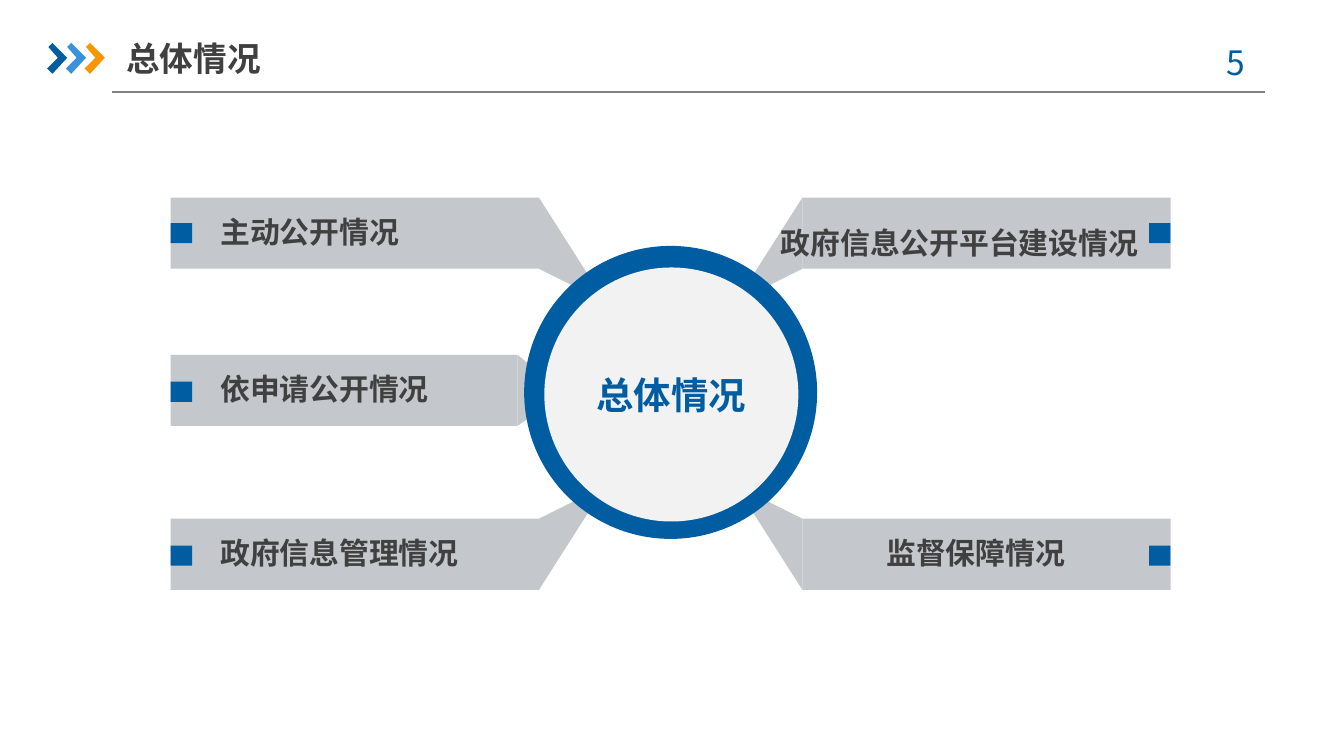
from lxml.etree import SubElement
from pptx import Presentation
from pptx.dml.color import RGBColor
from pptx.enum.shapes import MSO_CONNECTOR, MSO_SHAPE
from pptx.enum.text import MSO_ANCHOR, PP_ALIGN
from pptx.oxml.ns import qn
from pptx.util import Inches, Pt

FONT = "Noto Sans CJK SC"
COLORS = {
    "blue": "005DA2", "sky": "3992DB", "orange": "F79600", "bar": "C4C7CB",
    "pale": "F2F2F2", "dark": "404040", "rule": "808080",
}

deck = Presentation()
deck.slide_width = Inches(10)
deck.slide_height = deck.slide_width * 9 // 16
UNIT = deck.slide_width / 100
slide = deck.slides.add_slide(deck.slide_layouts[6])
shapes = slide.shapes


def draw(kind, box, color):
    if kind == "free":
        dots = [(round(x * UNIT), round(y * UNIT)) for x, y in box]
        pen = shapes.build_freeform(*dots[0])
        pen.add_line_segments(dots[1:], close=True)
        shape = pen.convert_to_shape()
    else:
        shape = shapes.add_shape(kind, *[round(n * UNIT) for n in box])
    shape.shadow.inherit = False
    shape.fill.solid()
    shape.fill.fore_color.rgb = RGBColor.from_string(COLORS[color])
    shape.line.fill.background()
    return shape


def write(text, size, color, bold=True, align=PP_ALIGN.LEFT, box=None, host=None):
    if host is None:
        host = shapes.add_textbox(*[round(n * UNIT) for n in box])
        host.text_frame.margin_left = host.text_frame.margin_right = 0
    frame = host.text_frame
    frame.word_wrap = True
    frame.text = text
    line = frame.paragraphs[0]
    line.alignment = align
    run = line.runs[0]
    run.font.size, run.font.bold, run.font.name = Pt(size), bold, FONT
    run.font.color.rgb = RGBColor.from_string(COLORS[color])
    SubElement(run._r.get_or_add_rPr(), qn("a:ea")).set("typeface", FONT)
    return frame


rule = shapes.add_connector(
    MSO_CONNECTOR.STRAIGHT, *[round(n * UNIT) for n in (8.3, 6.84, 94.1, 6.84)])
rule.line.color.rgb = RGBColor.from_string(COLORS["rule"])
rule.line.width = Pt(0.75)
SubElement(rule._element.spPr, qn("a:effectLst"))

chevron = [(0.1, 3.5), (0.4, 3.2), (1.5, 4.3), (0.4, 5.5), (0, 5.1), (0.8, 4.3)]
for i, color in enumerate(["blue", "sky", "orange"]):
    draw("free", [(3.5 + 1.4 * i + x, y) for x, y in chevron], color)

title = write("总体情况", 18, "dark", box=(9.4, 2.2, 23.3, 4.2))
title.vertical_anchor = MSO_ANCHOR.MIDDLE
write("5", 18, "blue", False, PP_ALIGN.CENTER, box=(88.3, 2.6, 7.3, 4))

MID, TALL = 49.9, 5.3
tops = [14.7, 26.4, 38.6]
marks = [16.6, 28.4, 40.6]
down = [(9.8, 0), (5.6, 6.6), (6.2, 7.1), (9.8, TALL)]
up = [(x, TALL - y) for x, y in down]
flat = [(11.4, 0), (8.6, 2.3), (8.6, 3.3), (11.4, TALL)]
tapers = [down, flat, up]

LEFT, RIGHT, CENTER = PP_ALIGN.LEFT, PP_ALIGN.RIGHT, PP_ALIGN.CENTER
items = [
    (-1, 0, "主动公开情况", LEFT, (16.4, 15.4, 21.4, 3.1)),
    (-1, 1, "依申请公开情况", LEFT, (16.4, 27.1, 21.4, 3.1)),
    (-1, 2, "政府信息管理情况", LEFT, (16.4, 39.3, 21.4, 3.1)),
    (1, 0, "政府信息公开平台建设情况", RIGHT, (55.6, 16.2, 29.1, 3.1)),
    (1, 2, "监督保障情况", CENTER, (61.9, 39.3, 21.4, 3.1)),
]
for side, row, text, align, box in items:
    top = tops[row]
    inner = MID + side * tapers[row][0][0]
    outer = 12.7 if side < 0 else 87.1
    draw(MSO_SHAPE.RECTANGLE,
         (min(inner, outer), top, abs(outer - inner), TALL), "bar")
    draw("free", [(MID + side * x, top + y) for x, y in tapers[row]], "bar")
    draw(MSO_SHAPE.RECTANGLE,
         (12.7 if side < 0 else 85.5, marks[row], 1.6, 1.5), "blue")
    write(text, 16, "dark", align=align, box=box)

draw(MSO_SHAPE.OVAL, (39, 18.3, 21.8, 21.8), "blue")
core = draw(MSO_SHAPE.OVAL, (40.5, 19.9, 18.9, 18.9), "pale")
hub = write("总体情况", 20, "blue", align=CENTER, host=core)
hub.vertical_anchor = MSO_ANCHOR.MIDDLE

deck.save("out.pptx")
